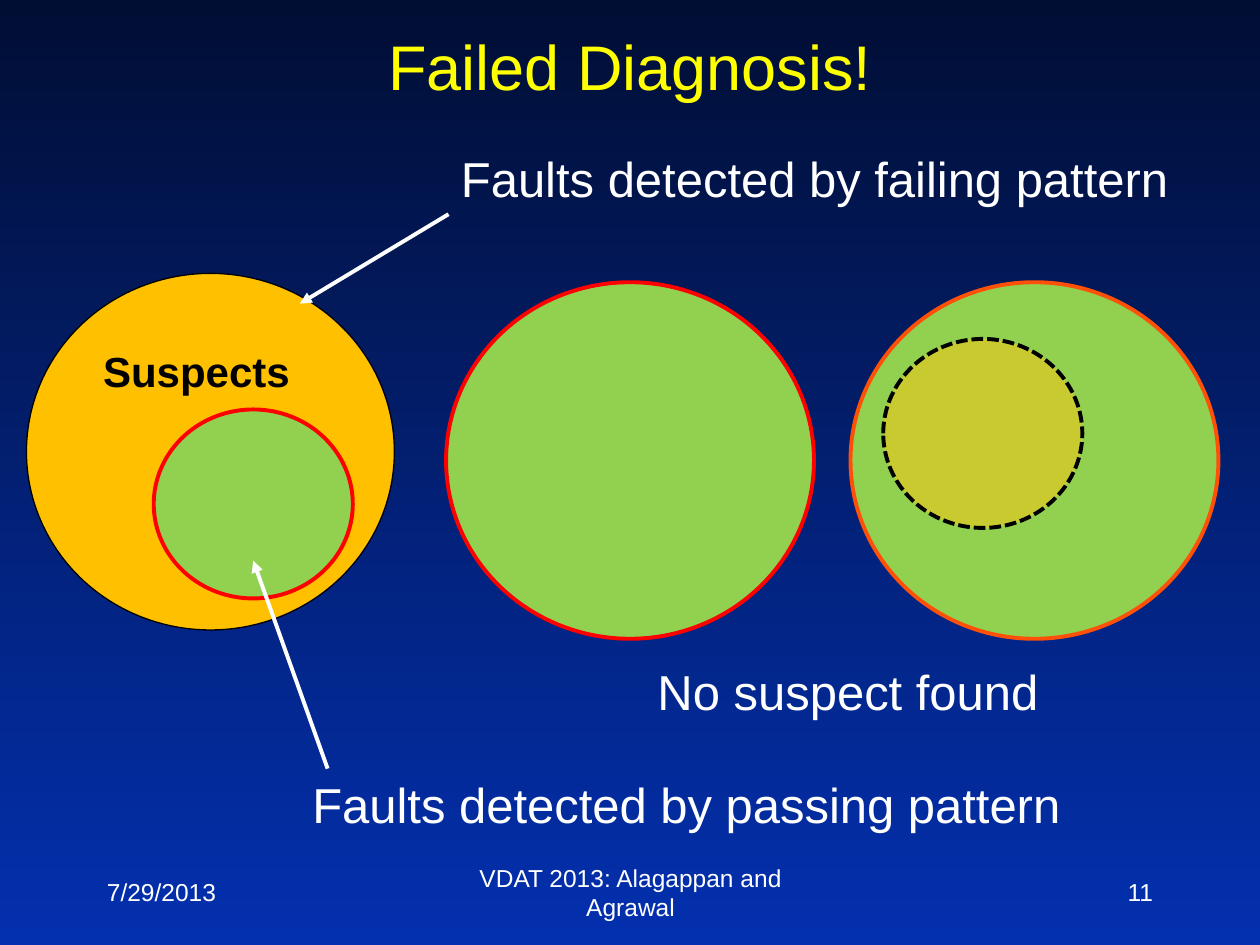
from dataclasses import dataclass
from typing import Optional

from lxml.etree import SubElement
from pptx import Presentation
from pptx.dml.color import RGBColor
from pptx.enum.dml import MSO_LINE
from pptx.enum.shapes import MSO_CONNECTOR, MSO_SHAPE
from pptx.enum.text import MSO_ANCHOR, PP_ALIGN
from pptx.oxml.ns import qn
from pptx.util import Emu, Inches, Pt

FONT = "Arial"
NIGHT = RGBColor(0x01, 0x0E, 0x34)
ROYAL = RGBColor(0x03, 0x30, 0xAF)
WHITE = RGBColor(0xFF, 0xFF, 0xFF)
BLACK = RGBColor(0x00, 0x00, 0x00)
YELLOW = RGBColor(0xFF, 0xFF, 0x00)
AMBER = RGBColor(0xFF, 0xC0, 0x00)
GOLD = RGBColor(0xFF, 0xC6, 0x11)
GREEN = RGBColor(0x92, 0xD0, 0x50)
RED = RGBColor(0xFF, 0x00, 0x00)
ORANGE = RGBColor(0xFF, 0x50, 0x08)

# The slide is a grid of 100 columns and 75 rows of square cells.
COLUMNS, ROWS = 100, 75
CELL = Inches(0.1)
LARGE_SET = (29.2, 28.3)
SMALL_SET = (15.8, 15)
LABEL_ROWS = 5.7
FOOTER_ROW, FOOTER_ROWS = 68.3, 5


@dataclass(frozen=True)
class FaultSet:
    column: float
    row: float
    size: tuple[float, float]
    fill: RGBColor
    outline: RGBColor
    weight: float = 2.25
    dash: Optional[MSO_LINE] = None
    opacity: Optional[int] = None


@dataclass(frozen=True)
class Label:
    text: str
    column: float
    row: float
    columns: float
    rows: float = LABEL_ROWS
    points: int = 28
    color: RGBColor = WHITE
    bold: bool = False
    align: PP_ALIGN = PP_ALIGN.LEFT
    anchor: MSO_ANCHOR = MSO_ANCHOR.TOP


@dataclass(frozen=True)
class Pointer:
    start: tuple[float, float]
    tip: tuple[float, float]


FAULT_SETS = [
    FaultSet(2.1, 21.7, LARGE_SET, AMBER, BLACK, weight=0.75),
    FaultSet(12.2, 32.5, SMALL_SET, GREEN, RED),
    FaultSet(35.4, 22.4, LARGE_SET, GREEN, RED),
    FaultSet(67.5, 22.4, LARGE_SET, GREEN, ORANGE),
    FaultSet(70.1, 26.9, SMALL_SET, GOLD, BLACK, dash=MSO_LINE.SQUARE_DOT, opacity=50),
]
POINTERS = [
    Pointer((35.6, 17), (23.8, 24.1)),
    Pointer((26, 61), (20.1, 44.5)),
]
LABELS = [
    Label("Faults detected by failing pattern", 35.6, 11.3, 58.9),
    Label("Faults detected by passing pattern", 23.8, 61, 62.1),
    Label("No suspect found", 51.2, 52, 32.6),
    Label("Suspects", 7.2, 26.9, 18.8, points=24, color=BLACK, bold=True),
]
FOOTERS = [
    Label(text, column, FOOTER_ROW, columns, FOOTER_ROWS, points=14,
          align=align, anchor=MSO_ANCHOR.MIDDLE)
    for text, column, columns, align in [
        ("7/29/2013", 7.5, 20.8, PP_ALIGN.LEFT),
        ("VDAT 2013: Alagappan and Agrawal", 34.2, 31.7, PP_ALIGN.CENTER),
        ("11", 71.7, 20.8, PP_ALIGN.RIGHT),
    ]
]
TITLE = Label("Failed Diagnosis!", 5, 1.7, 90, 12.5, points=36, color=YELLOW,
              align=PP_ALIGN.CENTER)


def cells(*counts: float) -> list[Emu]:
    return [Emu(round(count * CELL)) for count in counts]


def paint_background(slide) -> None:
    fill = slide.background.fill
    fill.gradient()
    fill.gradient_angle = 270
    for stop, color, position in zip(fill.gradient_stops, (NIGHT, ROYAL), (0, 1)):
        stop.color.rgb = color
        stop.position = position


def write_label(shape, label: Label) -> None:
    shape.left, shape.top, shape.width, shape.height = cells(
        label.column, label.row, label.columns, label.rows)
    frame = shape.text_frame
    frame.word_wrap = True
    frame.vertical_anchor = label.anchor
    paragraph = frame.paragraphs[0]
    paragraph.alignment = label.align
    run = paragraph.add_run()
    run.text = label.text
    run.font.name = FONT
    run.font.size = Pt(label.points)
    run.font.bold = label.bold
    run.font.color.rgb = label.color


def draw_fault_set(slide, fault_set: FaultSet) -> None:
    oval = slide.shapes.add_shape(
        MSO_SHAPE.OVAL, *cells(fault_set.column, fault_set.row, *fault_set.size))
    oval.shadow.inherit = False
    oval.fill.solid()
    oval.fill.fore_color.rgb = fault_set.fill
    oval.line.color.rgb = fault_set.outline
    oval.line.width = Pt(fault_set.weight)
    if fault_set.dash is not None:
        oval.line.dash_style = fault_set.dash
    if fault_set.opacity is not None:
        color = oval.fill._xPr.find(qn("a:solidFill"))[0]
        SubElement(color, qn("a:alpha"), val=str(fault_set.opacity * 1000))


def draw_pointer(slide, pointer: Pointer) -> None:
    arrow = slide.shapes.add_connector(
        MSO_CONNECTOR.STRAIGHT, *cells(*pointer.start, *pointer.tip))
    arrow.line.color.rgb = WHITE
    arrow.line.width = Pt(2.25)
    SubElement(arrow.line._get_or_add_ln(), qn("a:tailEnd"), type="triangle")
    SubElement(arrow._element.spPr, qn("a:effectLst"))


def main() -> None:
    presentation = Presentation()
    presentation.slide_width, presentation.slide_height = cells(COLUMNS, ROWS)
    title_only = presentation.slide_layouts[5]
    slide = presentation.slides.add_slide(title_only)
    paint_background(slide)
    write_label(slide.shapes.title, TITLE)
    for fault_set in FAULT_SETS:
        draw_fault_set(slide, fault_set)
    for pointer in POINTERS:
        draw_pointer(slide, pointer)
    for label in LABELS + FOOTERS:
        write_label(slide.shapes.add_textbox(0, 0, 0, 0), label)
    presentation.save("out.pptx")


if __name__ == "__main__":
    main()
